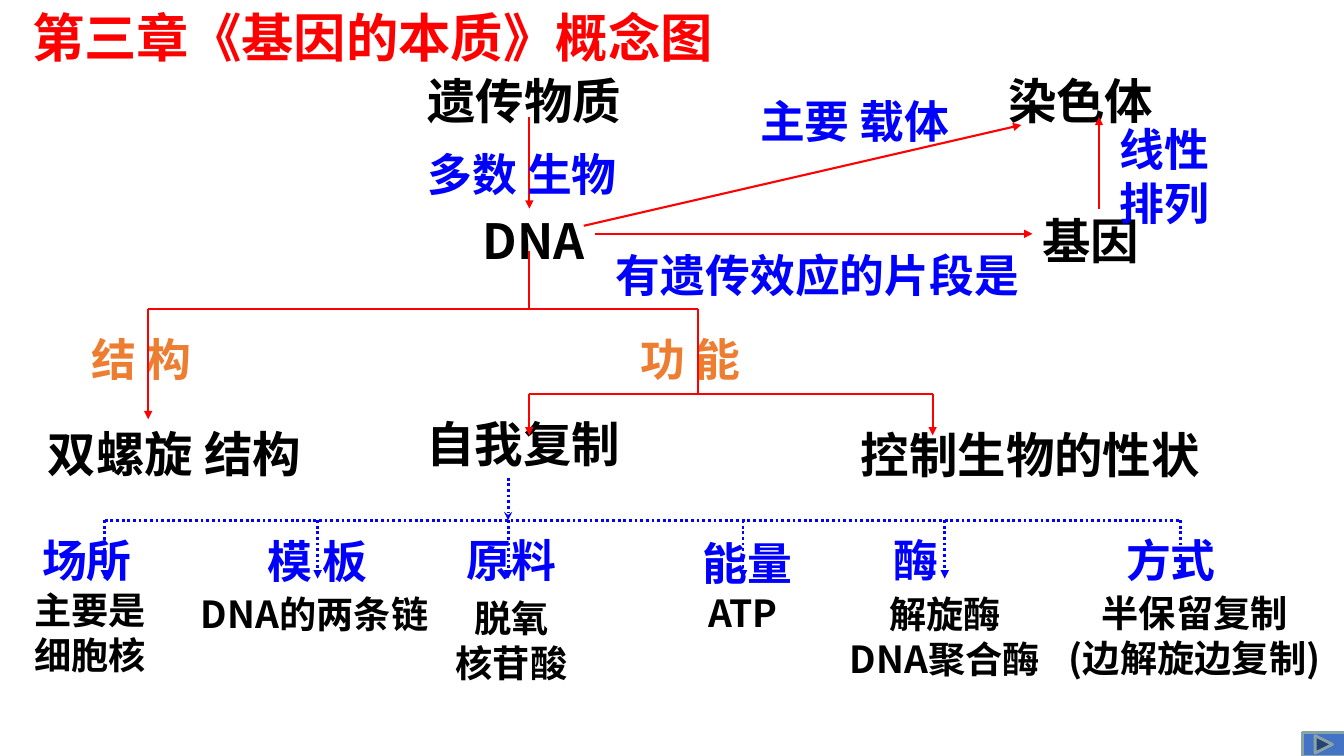
from dataclasses import dataclass

from lxml import etree
from pptx import Presentation
from pptx import util as u
from pptx.dml.color import RGBColor
from pptx.enum import dml, shapes, text
from pptx.oxml import ns

BLACK = RGBColor(0x00, 0x00, 0x00)
RED = RGBColor(0xFF, 0x00, 0x00)
BLUE = RGBColor(0x00, 0x00, 0xFF)
ORANGE = RGBColor(0xED, 0x7D, 0x31)
BUTTON_FILL = RGBColor(0x44, 0x72, 0xC4)
BUTTON_LINE = RGBColor(0x89, 0xA4, 0xA7)

FONT = "Noto Sans CJK SC"
TITLE, CONCEPT, LABEL, DETAIL = 37.4, 34.6, 32, 26.6  # points


@dataclass(frozen=True)
class Caption:
    lines: tuple[str, ...]
    left: float
    top: float
    width: float
    height: float
    centred: bool = False
    wrap: bool = True


@dataclass(frozen=True)
class Link:
    x1: float
    y1: float
    x2: float
    y2: float
    head: str = ""


# Main concepts
CONCEPTS = (
    Caption(("遗传物质",), 4.14, 0.66, 2.64, 0.68),
    Caption(("染色体",), 9.9, 0.66, 2.11, 0.68),
    Caption((" DNA",), 4.58, 2.04, 1.38, 0.68, wrap=False),
    Caption(("基因",), 10.24, 2.04, 1.79, 0.68),
    Caption(("双螺旋 结构 ",), 0.16, 4.16, 3.25, 0.68, centred=True),
    Caption(("自我复制",), 4.13, 4.06, 2.75, 0.68),
    Caption(("控制生物的性状",), 8.44, 4.17, 4.54, 0.68),
)

# Details of replication, under their headings
DETAILS = (
    Caption(("主要是细胞核",), 0.24, 5.78, 1.64, 1),
    Caption((" DNA的两条链",), 1.81, 5.82, 2.73, 0.55),
    Caption(("脱氧", "核苷酸"), 4.18, 5.86, 1.79, 1, centred=True),
    Caption(("ATP",), 6.93, 5.81, 1.1, 0.55),
    Caption(("解旋酶", "DNA聚合酶"), 7.71, 5.82, 3.33, 1, centred=True),
    Caption(("半保留复制", "(边解旋边复制)"), 10.39, 5.81, 2.92, 1, centred=True),
)

ASPECTS = (
    Caption(("结 构",), 0.81, 3.24, 1.67, 0.64),
    Caption(("功 能",), 6.25, 3.24, 1.89, 0.64),
)

# Relations between concepts, then headings of replication
LABELS = (
    Caption(("多数 生物",), 4.14, 1.41, 3.05, 0.64),
    Caption(("主要 载体",), 7.44, 0.88, 2.61, 0.64),
    Caption(("线性排列",), 11.01, 1.16, 1.25, 1.18),
    Caption(("有遗传效应的片段是",), 6.01, 2.41, 4.83, 0.64),
    Caption(("场所",), 0.32, 5.24, 1.47, 0.64),
    Caption(("模 板",), 2.55, 5.25, 1.71, 0.64),
    Caption(("原料",), 4.53, 5.24, 1.54, 0.64),
    Caption(("能量",), 6.87, 5.27, 1.71, 0.64),
    Caption(("酶",), 8.76, 5.24, 1.18, 0.64),
    Caption(("方式",), 11.07, 5.24, 1.58, 0.64),
)

HEADING = Caption(("第三章《基因的本质》概念图",), 0.22, 0, 8.75, 0.73)

# Red links: relations, then the tree of structure and function
DNA_X, STRUCTURE_X, FUNCTION_X, TRAIT_X = 5.25, 1.47, 6.92, 9.25
TREE_Y, FUNCTION_Y = 3.07, 3.91
RED_LINKS = (
    Link(DNA_X, 1.16, DNA_X, 2.07, "triangle"),
    Link(5.9, 2.32, 10.24, 2.32, "triangle"),
    Link(5.79, 2.24, 10.13, 1.24, "triangle"),
    Link(10.9, 2.07, 10.9, 1.16, "triangle"),
    Link(DNA_X, 2.49, DNA_X, TREE_Y),
    Link(STRUCTURE_X, TREE_Y, FUNCTION_X, TREE_Y),
    Link(STRUCTURE_X, TREE_Y, STRUCTURE_X, 4.16, "triangle"),
    Link(FUNCTION_X, TREE_Y, FUNCTION_X, FUNCTION_Y),
    Link(DNA_X, FUNCTION_Y, TRAIT_X, FUNCTION_Y),
    *(Link(x, FUNCTION_Y, x, 4.32, "triangle") for x in (DNA_X, TRAIT_X)),
)

# Dotted links from replication to its six headings
BRANCH_XS = (1.04, 3.15, 5.04, 7.37, 9.37, 11.71)
BRANCH_Y = 5.16
DOTTED_LINKS = (
    Link(BRANCH_XS[2], 4.74, BRANCH_XS[2], BRANCH_Y, "stealth"),
    Link(BRANCH_XS[0], BRANCH_Y, BRANCH_XS[-1], BRANCH_Y),
    *(Link(x, BRANCH_Y, x, 5.74, "triangle") for x in BRANCH_XS),
)


def add_caption(page, caption: Caption, size: float, color: RGBColor) -> None:
    box = page.shapes.add_textbox(
        u.Inches(caption.left), u.Inches(caption.top),
        u.Inches(caption.width), u.Inches(caption.height))
    frame = box.text_frame
    frame.word_wrap = caption.wrap
    frame.auto_size = text.MSO_AUTO_SIZE.SHAPE_TO_FIT_TEXT
    for index, line in enumerate(caption.lines):
        para = frame.add_paragraph() if index else frame.paragraphs[0]
        para.alignment = text.PP_ALIGN.CENTER if caption.centred else text.PP_ALIGN.LEFT
        span = para.add_run()
        span.text = line
        span.font.name = FONT
        span.font.size = u.Pt(size)
        span.font.bold = True
        span.font.color.rgb = color
        # East Asian characters take their font from a:ea
        east_asian = etree.SubElement(span._r.get_or_add_rPr(), ns.qn("a:ea"))
        east_asian.set("typeface", FONT)


def add_link(page, link: Link, color: RGBColor, width: float, dotted: bool) -> None:
    connector = page.shapes.add_connector(
        shapes.MSO_CONNECTOR.STRAIGHT,
        u.Inches(link.x1), u.Inches(link.y1), u.Inches(link.x2), u.Inches(link.y2))
    connector.line.color.rgb = color
    connector.line.width = u.Pt(width)
    if dotted:
        connector.line.dash_style = dml.MSO_LINE.ROUND_DOT
    if link.head:
        tail = etree.SubElement(connector.line._get_or_add_ln(), ns.qn("a:tailEnd"))
        tail.set("type", link.head)
    etree.SubElement(connector._element.spPr, ns.qn("a:effectLst"))


def add_next_button(page) -> None:
    button = page.shapes.add_shape(
        shapes.MSO_SHAPE.ACTION_BUTTON_FORWARD_OR_NEXT,
        u.Inches(12.92), u.Inches(7.27), u.Inches(0.42), u.Inches(0.23))
    button.shadow.inherit = False
    button.fill.solid()
    button.fill.fore_color.rgb = BUTTON_FILL
    button.line.color.rgb = BUTTON_LINE
    button.line.width = u.Pt(2)


def main() -> None:
    deck = Presentation()
    deck.slide_width = u.Inches(13.33)
    deck.slide_height = u.Inches(7.5)
    page = deck.slides.add_slide(deck.slide_layouts[6])

    # Black and orange text lies beneath the red links
    for captions, size, color in ((CONCEPTS, CONCEPT, BLACK),
                                  (DETAILS, DETAIL, BLACK),
                                  (ASPECTS, LABEL, ORANGE)):
        for caption in captions:
            add_caption(page, caption, size, color)
    for link in RED_LINKS:
        add_link(page, link, RED, 1.5, dotted=False)

    # Blue labels lie above the red links and beneath the dotted ones
    for caption in LABELS:
        add_caption(page, caption, LABEL, BLUE)
    for link in DOTTED_LINKS:
        add_link(page, link, BLUE, 2, dotted=True)

    # Title and navigation
    add_caption(page, HEADING, TITLE, RED)
    add_next_button(page)
    deck.save("out.pptx")


if __name__ == "__main__":
    main()
